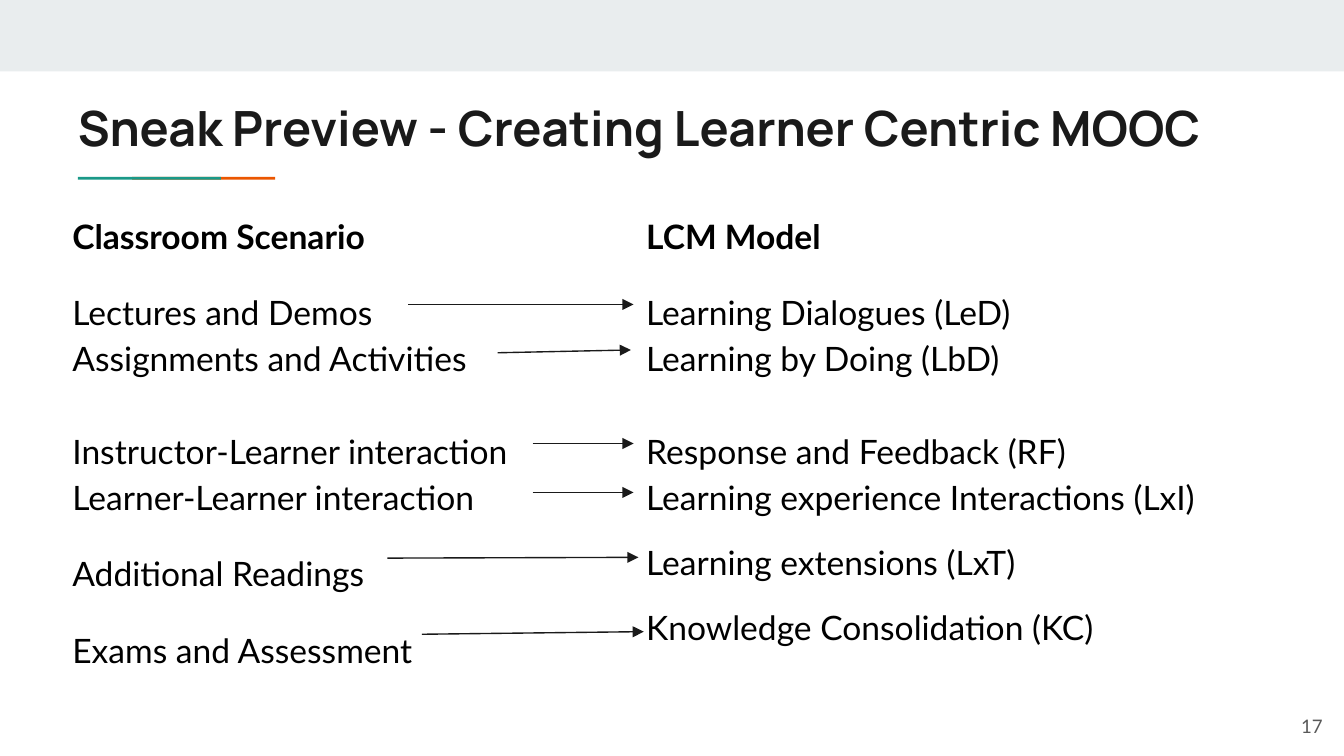
from lxml.etree import SubElement
from pptx import Presentation
from pptx.dml.color import RGBColor
from pptx.enum.shapes import MSO_CONNECTOR, MSO_SHAPE
from pptx.enum.text import MSO_ANCHOR, PP_ALIGN
from pptx.oxml.ns import qn
from pptx.util import Pt

COLORS = {
    "band": "E9EDEE",
    "orange": "EB5600",
    "teal": "1A9988",
    "body": "000000",
    "dark": "1A1A1A",
    "number": "595959",
}


def add_text_frame(left, top, width, height):
    frame = slide.shapes.add_textbox(Pt(left), Pt(top), Pt(width), Pt(height)).text_frame
    frame.word_wrap = True
    frame.margin_left = frame.margin_right = Pt(7.2)
    frame.margin_top = frame.margin_bottom = Pt(7.2)
    return frame


def add_run(paragraph, text, size, color, font="Lato", bold=False):
    run = paragraph.add_run()
    run.text = text
    run.font.name = font
    run.font.size = Pt(size)
    run.font.bold = bold
    run.font.color.rgb = RGBColor.from_string(COLORS[color])


presentation = Presentation()
presentation.slide_width = Pt(720)
presentation.slide_height = Pt(405)
slide = presentation.slides.add_slide(presentation.slide_layouts[6])

bars = [
    (0, 0, 720, 38.3, "band"),
    (70.8, 94.8, 76.6, 1.5, "orange"),
    (41.8, 94.8, 76.6, 1.5, "teal"),
]
for left, top, width, height, color in bars:
    bar = slide.shapes.add_shape(MSO_SHAPE.RECTANGLE, Pt(left), Pt(top), Pt(width), Pt(height))
    bar.shadow.inherit = False
    bar.fill.solid()
    bar.fill.fore_color.rgb = RGBColor.from_string(COLORS[color])
    bar.line.fill.background()

title = add_text_frame(34.6, 45.4, 652.3, 42.5)
add_run(title.paragraphs[0], "Sneak Preview - Creating Learner Centric MOOC", 26, "dark", "Manrope", True)

GROUP_GAP = 24.8
columns = [
    (31.7, 253.4, 16, [
        "Classroom Scenario",
        "Lectures and Demos",
        "Assignments and Activities",
        "Instructor-Learner interaction",
        "Learner-Learner interaction",
        "Additional Readings",
        "Exams and Assessment",
    ]),
    (339.1, 373, 10, [
        "LCM Model",
        "Learning Dialogues (LeD)",
        "Learning by Doing (LbD)",
        "Response and Feedback (RF)",
        "Learning experience Interactions (LxI)",
        "Learning extensions (LxT)",
        "Knowledge Consolidation (KC)",
    ]),
]
for left, width, end_gap, lines in columns:
    frame = add_text_frame(left, 105.1, width, 288)
    gaps = [0, 16, 0, GROUP_GAP, 0, end_gap, end_gap]
    for index, (text, gap) in enumerate(zip(lines, gaps)):
        paragraph = frame.add_paragraph() if index else frame.paragraphs[0]
        paragraph.line_spacing = 1.15
        paragraph.space_before = Pt(gap)
        add_run(paragraph, text, 18, "body", bold=index == 0)

arrows = [
    (218.6, 163.1, 339.4, 163.1),
    (266.6, 189, 338, 187.5),
    (285.4, 237.6, 339.4, 237.6),
    (285.4, 263.8, 339.4, 263.8),
    (207.6, 299, 342, 298.6),
    (226, 339.8, 344.9, 338.4),
]
for start_x, start_y, end_x, end_y in arrows:
    arrow = slide.shapes.add_connector(
        MSO_CONNECTOR.STRAIGHT, Pt(start_x), Pt(start_y), Pt(end_x), Pt(end_y)
    )
    arrow.line.width = Pt(0.75)
    arrow.line.color.rgb = RGBColor.from_string(COLORS["dark"])
    properties = arrow.element.spPr
    SubElement(properties.find(qn("a:ln")), qn("a:tailEnd"), type="triangle")
    SubElement(properties, qn("a:effectLst"))

number = add_text_frame(672.5, 373.7, 43.2, 31)
number.vertical_anchor = MSO_ANCHOR.MIDDLE
number.paragraphs[0].alignment = PP_ALIGN.RIGHT
add_run(number.paragraphs[0], "17", 10, "number")

presentation.save("out.pptx")
